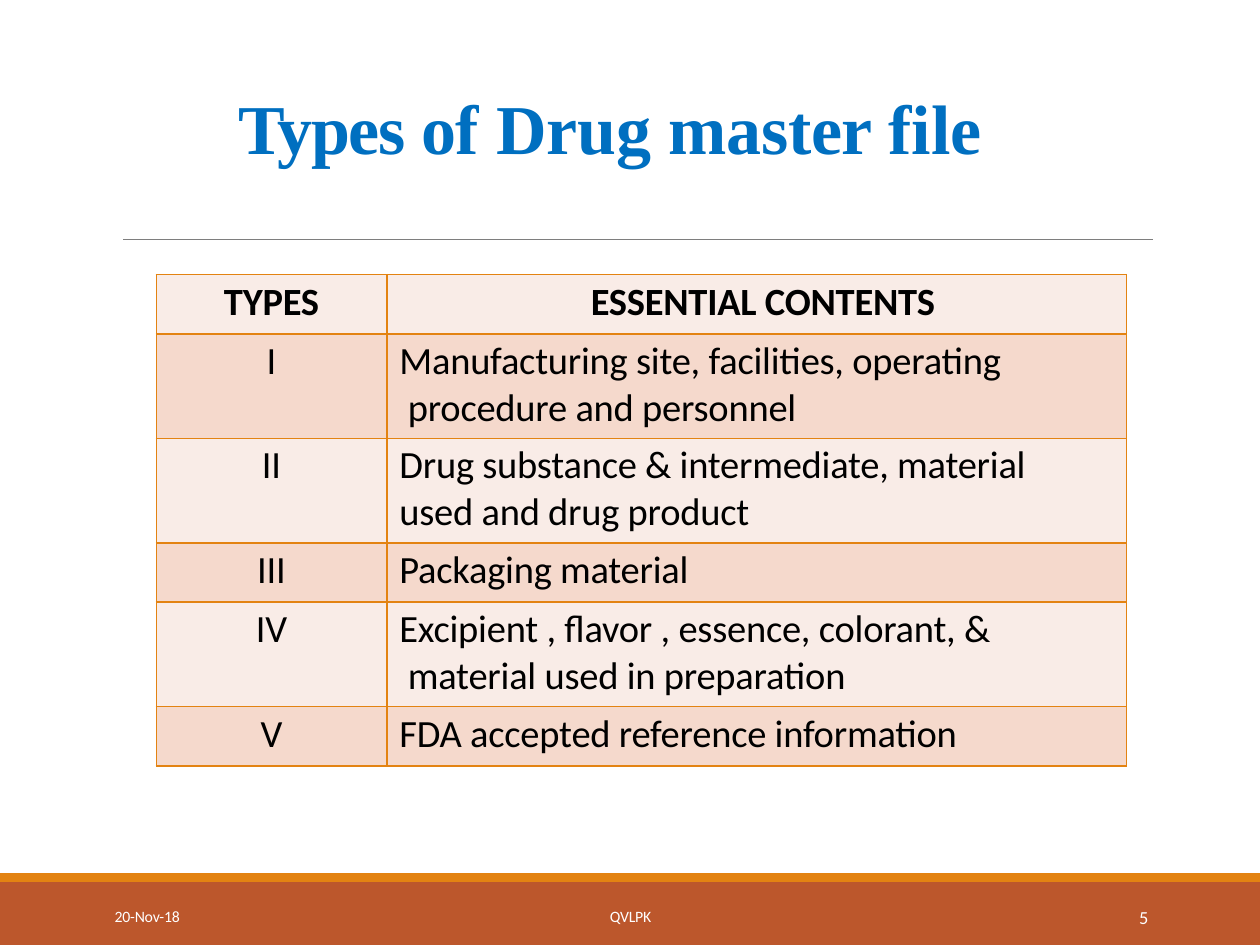
"""Build the slide on the types of drug master file."""
from lxml.etree import SubElement
from pptx import Presentation
from pptx.dml.color import RGBColor
from pptx.enum.shapes import MSO_CONNECTOR, MSO_SHAPE
from pptx.enum.text import MSO_ANCHOR, MSO_AUTO_SIZE, PP_ALIGN
from pptx.oxml.ns import qn
from pptx.util import Inches, Pt

RUST = RGBColor(0xBC, 0x57, 0x2C)
ORANGE = RGBColor(0xE3, 0x83, 0x12)
GRAY = RGBColor(0x7E, 0x7E, 0x7E)
BLUE = RGBColor(0x00, 0x6F, 0xC0)
WHITE = RGBColor(0xFF, 0xFF, 0xFF)
BLACK = RGBColor(0x00, 0x00, 0x00)
PALE = RGBColor(0xF9, 0xEC, 0xE7)
PEACH = RGBColor(0xF5, 0xD9, 0xCC)

TITLE = [("Types ", -0.9), ("of ", -0.2), ("Drug master file", -0.1)]
ROWS = [
    ("TYPES", ["ESSENTIAL CONTENTS"]),
    ("I", ["Manufacturing site, facilities, operating", " procedure and personnel"]),
    ("II", ["Drug substance & intermediate, material", "used and drug product"]),
    ("III", ["Packaging material"]),
    ("IV", ["Excipient , flavor , essence, colorant, &", " material used in preparation"]),
    ("V", ["FDA accepted reference information"]),
]
BANDS = [(7, 0.5, RUST), (6.93, 0.07, ORANGE)]
NOTES = [
    ("20-Nov-18", 0.91, 7.2, 0.6, 9),
    ("QVLPK", 4.84, 7.2, 0.45, 9),
    ("5", 9.04, 7.19, 0.2, 10.5),
]
COLS = [1.83, 5.87]
HIGH = {1: 0.47, 2: 0.83}

HEAD = {"name": "Times New Roman", "size": Pt(40), "bold": True}
BODY = {"name": "Calibri", "size": Pt(22), "bold": False}
BOLD = {**BODY, "bold": True}
FRAME = {"margin_left": 0, "margin_right": 0, "margin_top": 0, "margin_bottom": 0,
         "word_wrap": True, "auto_size": MSO_AUTO_SIZE.NONE,
         "vertical_anchor": MSO_ANCHOR.TOP}
CELL = {"margin_left": 0, "margin_right": 0, "margin_top": Inches(0.03),
        "margin_bottom": 0, "vertical_anchor": MSO_ANCHOR.TOP}


def apply(item, form):
    for key, value in form.items():
        setattr(item, key, value)


def write(par, text, form, color, gap=-0.1):
    run = par.add_run()
    run.text = text
    apply(run.font, form)
    run.font.color.rgb = color
    run.font._element.set("spc", str(round(gap * 100)))


def edge(cell):
    props = cell._tc.get_or_add_tcPr()
    for side in "LRTB":
        line = SubElement(props, qn(f"a:ln{side}"), w=str(Pt(1)))
        fill = SubElement(line, qn("a:solidFill"))
        SubElement(fill, qn("a:srgbClr"), val=str(ORANGE))


def fill_cell(cell, lines, form, align, inset, tint):
    edge(cell)
    cell.fill.solid()
    cell.fill.fore_color.rgb = tint
    apply(cell, {**CELL, "margin_left": Inches(inset)})
    frame = cell.text_frame
    for i, line in enumerate(lines):
        par = frame.add_paragraph() if i else frame.paragraphs[0]
        par.alignment = align
        par.space_before = Pt(0 if i else 2.4)
        write(par, line, form, BLACK)


def add_bands(slide, width):
    for top, high, color in BANDS:
        band = slide.shapes.add_shape(
            MSO_SHAPE.RECTANGLE, 0, Inches(top), width, Inches(high))
        band.shadow.inherit = False
        band.fill.solid()
        band.fill.fore_color.rgb = color
        band.line.fill.background()
    rule = slide.shapes.add_connector(
        MSO_CONNECTOR.STRAIGHT, Inches(0.98), Inches(1.9), Inches(9.15), Inches(1.9))
    rule.line.color.rgb = GRAY
    rule.line.width = Pt(0.48)
    SubElement(rule._element.spPr, qn("a:effectLst"))


def add_title(slide):
    title = slide.shapes.title
    apply(title, {"left": Inches(1.89), "top": Inches(0.67),
                  "width": Inches(6), "height": Inches(0.69)})
    apply(title.text_frame, FRAME)
    par = title.text_frame.paragraphs[0]
    par.alignment = PP_ALIGN.LEFT
    for text, gap in TITLE:
        write(par, text, HEAD, BLUE, gap)


def add_notes(slide):
    for text, left, top, width, size in NOTES:
        box = slide.shapes.add_textbox(
            Inches(left), Inches(top), Inches(width), Inches(0.18))
        apply(box.text_frame, FRAME)
        form = {**BODY, "size": Pt(size)}
        write(box.text_frame.paragraphs[0], text, form, WHITE)


def add_grid(slide):
    highs = [HIGH[len(lines)] for _, lines in ROWS]
    grid = slide.shapes.add_table(
        len(ROWS), len(COLS), Inches(1.24), Inches(2.18),
        Inches(sum(COLS)), Inches(sum(highs))).table
    for col, width in zip(grid.columns, COLS):
        col.width = Inches(width)
    for i, (kind, lines) in enumerate(ROWS):
        grid.rows[i].height = Inches(highs[i])
        tint = PEACH if i % 2 else PALE
        form = BODY if i else BOLD
        align = PP_ALIGN.LEFT if i else PP_ALIGN.CENTER
        fill_cell(grid.cell(i, 0), [kind], form, PP_ALIGN.CENTER, 0, tint)
        fill_cell(grid.cell(i, 1), lines, form, align, 0.1, tint)


def main():
    deck = Presentation()
    deck.slide_width, deck.slide_height = Inches(10), Inches(7.5)
    slide = deck.slides.add_slide(deck.slide_layouts[5])
    add_bands(slide, deck.slide_width)
    add_title(slide)
    add_notes(slide)
    add_grid(slide)
    deck.save("out.pptx")


if __name__ == "__main__":
    main()
